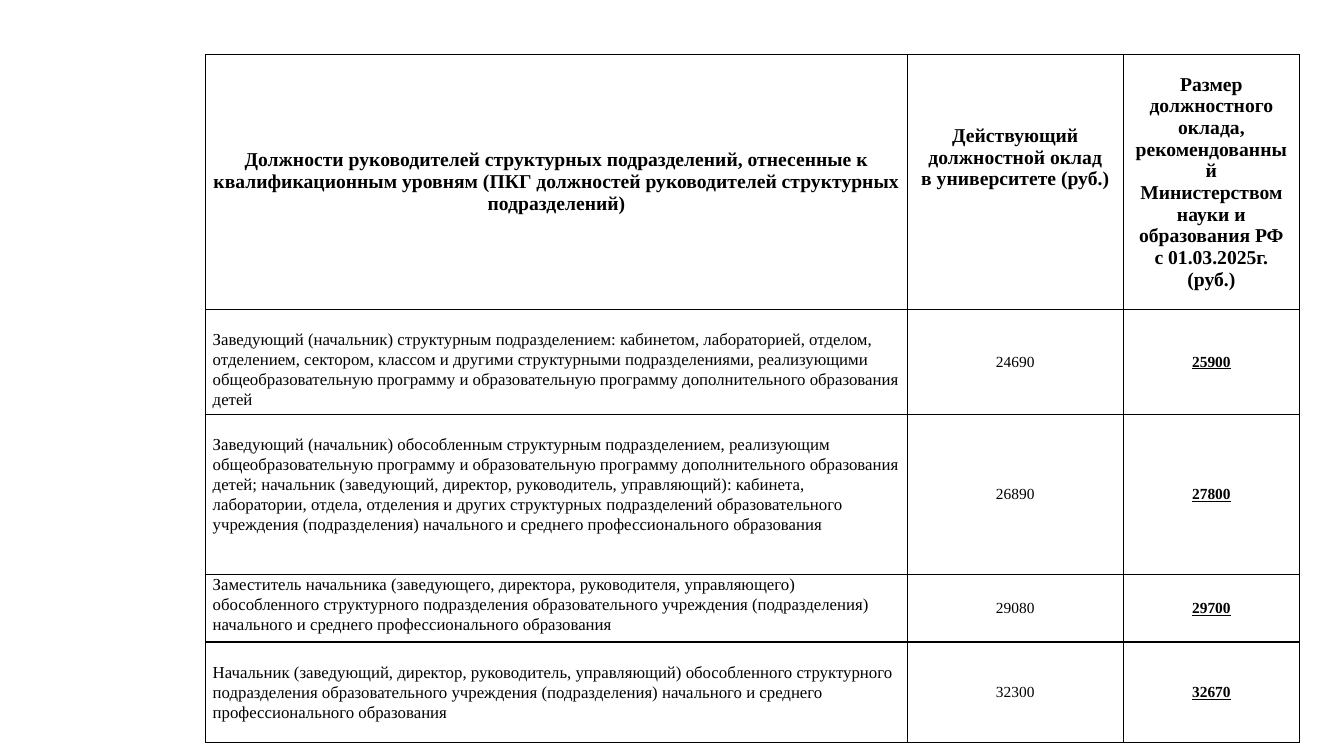
from lxml.etree import SubElement
from pptx import Presentation
from pptx.dml.color import RGBColor
from pptx.enum.text import MSO_ANCHOR as ANCHOR, PP_ALIGN as ALIGN
from pptx.oxml.ns import qn
from pptx.util import Inches, Pt

COLORS = {"ink": "000000", "paper": "FFFFFF"}
FONT = "Times New Roman"
COL_WIDTHS = [6.96, 2.14, 1.75]
ROW_HEIGHTS = [2.53, 1.04, 1.59, 0.67, 1]

# Heading: paragraphs, cell margins (left, top, right, bottom), anchor
HEADINGS = [
    (["Должности руководителей структурных подразделений, отнесенные к "
      "квалификационным уровням (ПКГ должностей руководителей структурных подразделений)"],
     (0, 0, 0, 0), ANCHOR.MIDDLE),
    (["Действующий должностной оклад", "в университете (руб.)"],
     (0.1, 0.7, 0.1, 0.05), ANCHOR.TOP),
    (["Размер должностного оклада, рекомендованный Министерством науки и "
      "образования РФ с 01.03.2025г. (руб.)"],
     (0.1, 0.05, 0.1, 0.05), ANCHOR.MIDDLE),
]

# Position, current salary, recommended salary, space above the position
SALARIES = [
    ("Заведующий (начальник) структурным подразделением: кабинетом, лабораторией, отделом, "
     "отделением, сектором, классом и другими структурными подразделениями, реализующими "
     "общеобразовательную программу и образовательную программу дополнительного образования детей",
     "24690", "25900", 0.2),
    ("Заведующий (начальник) обособленным структурным подразделением, реализующим "
     "общеобразовательную программу и образовательную программу дополнительного образования "
     "детей; начальник (заведующий, директор, руководитель, управляющий): кабинета, "
     "лаборатории, отдела, отделения и других структурных подразделений образовательного "
     "учреждения (подразделения) начального и среднего профессионального образования",
     "26890", "27800", 0.2),
    ("Заместитель начальника (заведующего, директора, руководителя, управляющего) "
     "обособленного структурного подразделения образовательного учреждения (подразделения) "
     "начального и среднего профессионального образования",
     "29080", "29700", 0),
    ("Начальник (заведующий, директор, руководитель, управляющий) обособленного структурного "
     "подразделения образовательного учреждения (подразделения) начального и среднего "
     "профессионального образования",
     "32300", "32670", 0.2),
]


def rgb(name):
    return RGBColor.from_string(COLORS[name])


def add_borders(cell):
    tc_pr = cell._tc.get_or_add_tcPr()
    for i, side in enumerate(("lnL", "lnR", "lnT", "lnB")):
        ln = SubElement(tc_pr, qn(f"a:{side}"), w=str(Pt(1)))
        fill = SubElement(ln, qn("a:solidFill"))
        SubElement(fill, qn("a:srgbClr"), val=COLORS["ink"])
        tc_pr.insert(i, ln)


def write_cell(cell, *lines, size=11, bold=False, underline=False, align=ALIGN.CENTER,
               spacing=None, anchor=ANCHOR.MIDDLE, margins=(0, 0, 0, 0)):
    cell.fill.solid()
    cell.fill.fore_color.rgb = rgb("paper")
    add_borders(cell)
    cell.vertical_anchor = anchor
    (cell.margin_left, cell.margin_top,
     cell.margin_right, cell.margin_bottom) = map(Inches, margins)
    tf = cell.text_frame
    for i, line in enumerate(lines):
        p = tf.add_paragraph() if i else tf.paragraphs[0]
        p.alignment = align
        if spacing:
            p.line_spacing = spacing
        r = p.add_run()
        r.text = line
        r.font.name = FONT
        r.font.size = Pt(size)
        r.font.bold = bold
        r.font.underline = underline
        r.font.color.rgb = rgb("ink")


def add_salary_table(s, x, y, w, h):
    table = s.shapes.add_table(len(ROW_HEIGHTS), len(COL_WIDTHS), Inches(x), Inches(y),
                               Inches(w), Inches(h)).table
    table.first_row = table.horz_banding = False
    for col, width in zip(table.columns, COL_WIDTHS):
        col.width = Inches(w * width / sum(COL_WIDTHS))
    for row, height in zip(table.rows, ROW_HEIGHTS):
        row.height = Inches(h * height / sum(ROW_HEIGHTS))

    # Header row
    for c, (lines, margins, anchor) in enumerate(HEADINGS):
        write_cell(table.cell(0, c), *lines, size=14, bold=True,
                   margins=margins, anchor=anchor)

    # Salary rows
    for i, (position, current, recommended, top) in enumerate(SALARIES, 1):
        write_cell(table.cell(i, 0), position, size=12, align=ALIGN.LEFT, spacing=1.07,
                   anchor=ANCHOR.TOP, margins=(0.07, top, 0.07, 0))
        write_cell(table.cell(i, 1), current)
        write_cell(table.cell(i, 2), recommended, bold=True, underline=True)


def main():
    prs = Presentation()
    prs.slide_width, prs.slide_height = Inches(13.33), Inches(7.5)
    s = prs.slides.add_slide(prs.slide_layouts[6])
    add_salary_table(s, 2.04, 0.54, 10.85, 6.83)
    prs.save("out.pptx")


if __name__ == "__main__":
    main()
